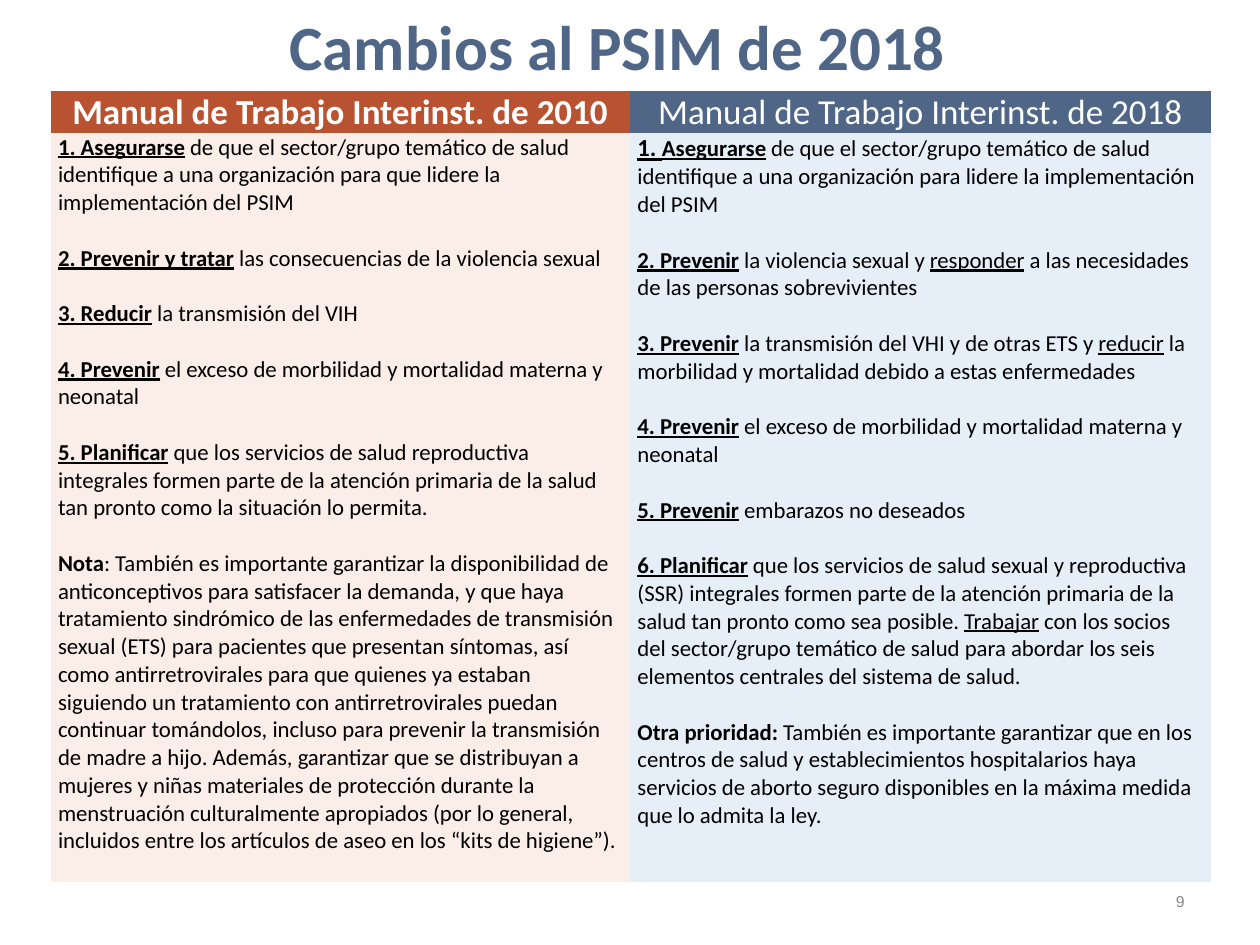
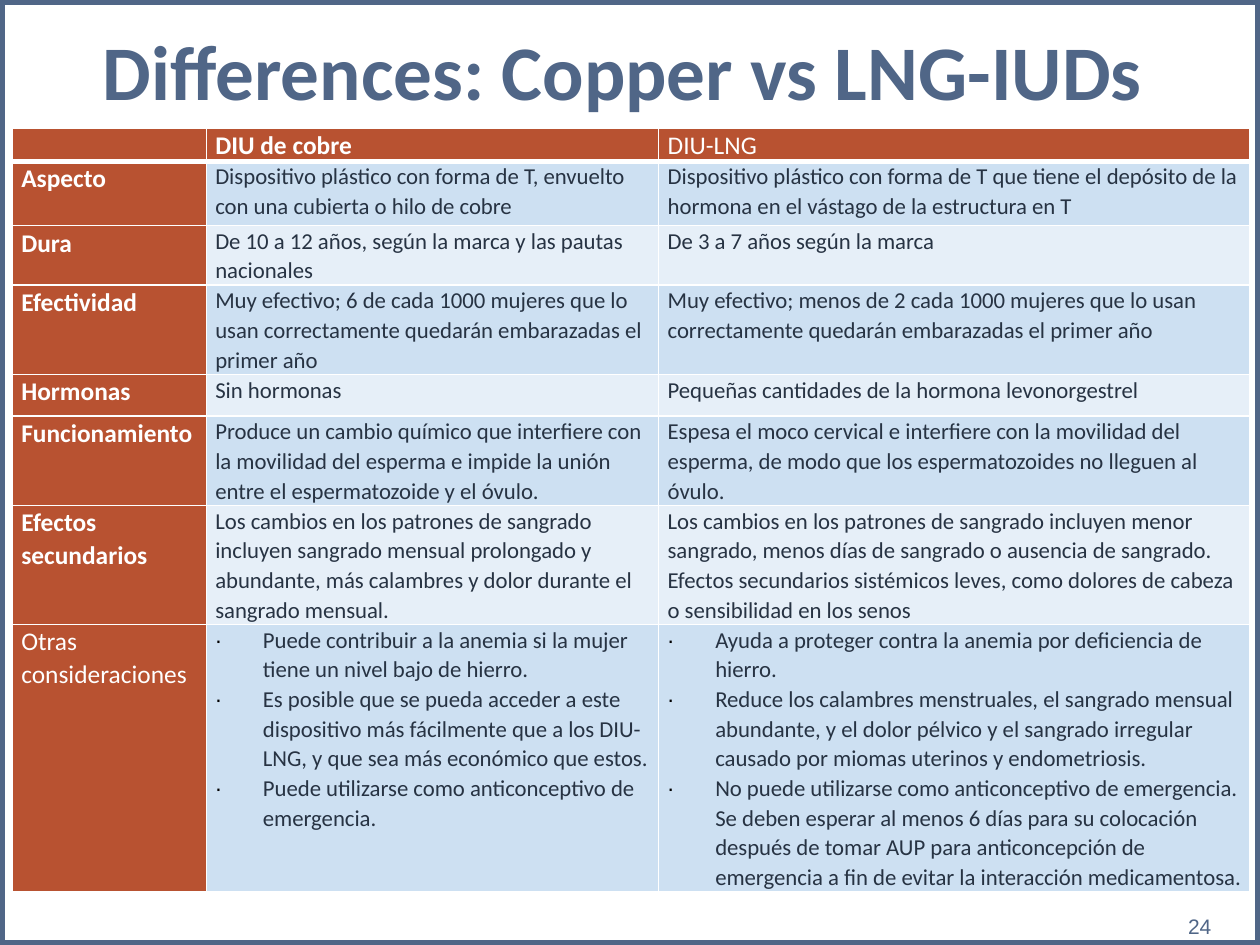
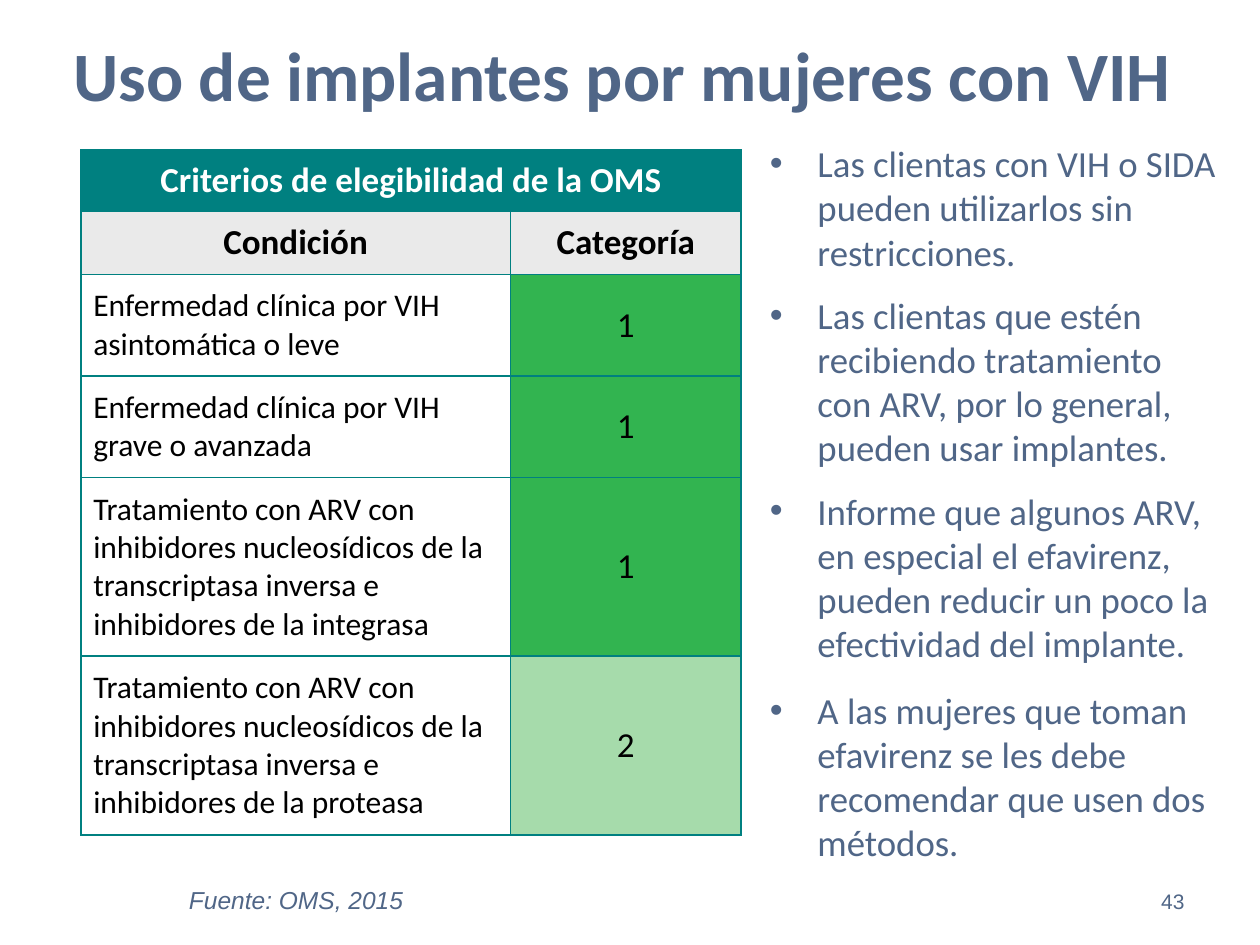
from lxml.etree import SubElement
from pptx import Presentation
from pptx.dml.color import RGBColor
from pptx.enum.shapes import MSO_SHAPE
from pptx.enum.text import MSO_ANCHOR, PP_ALIGN
from pptx.oxml.ns import qn
from pptx.util import Cm, Pt

SLATE = RGBColor(0x50, 0x66, 0x87)
RUST = RGBColor(0xB8, 0x52, 0x31)
PEACH = RGBColor(0xFB, 0xED, 0xE7)
PALE_BLUE = RGBColor(0xE6, 0xEF, 0xF8)
LIGHT_BLUE = RGBColor(0xCD, 0xE0, 0xF2)
INK = RGBColor(0x27, 0x33, 0x43)
TEAL = RGBColor(0x00, 0x80, 0x80)
SILVER = RGBColor(0xEA, 0xEA, 0xEA)
GREEN = RGBColor(0x32, 0xB4, 0x50)
LIGHT_GREEN = RGBColor(0xA6, 0xDB, 0xAB)
GREY = RGBColor(0x88, 0x88, 0x88)
BLACK = RGBColor(0, 0, 0)
WHITE = RGBColor(255, 255, 255)
LEFT, CENTER, RIGHT = PP_ALIGN.LEFT, PP_ALIGN.CENTER, PP_ALIGN.RIGHT


def write(paragraph, content, size, colour, face="Calibri", align=LEFT,
          bold=False, italic=False, bullet=None):
    spans = [(content, "")] if isinstance(content, str) else content
    for text, style in spans:
        run = paragraph.add_run()
        run.text = text
        if "b" in style:
            run.font.bold = True
        if "u" in style:
            run.font.underline = True
    paragraph.alignment = align
    if bullet:
        mark, mark_colour, indent = bullet
        properties = paragraph._p.get_or_add_pPr()
        properties.set("marL", str(indent))
        properties.set("indent", str(-Cm(0.96)))
        tint = SubElement(properties, qn("a:buClr"))
        SubElement(tint, qn("a:srgbClr"), val=str(mark_colour))
        SubElement(properties, qn("a:buFont"), typeface="Arial")
        SubElement(properties, qn("a:buChar"), char=mark)
    font = paragraph.font
    font.name, font.size, font.bold, font.italic = face, Pt(size), bold, italic
    font.color.rgb = colour


def style_cell(cell, fill, side, upright, edge=None, bottom_width=1):
    cell.margin_left = cell.margin_right = Cm(side)
    cell.margin_top = cell.margin_bottom = Cm(upright)
    properties = cell._tc.get_or_add_tcPr()
    for tag in ("lnL", "lnR", "lnT", "lnB"):
        width = bottom_width if tag == "lnB" else 1
        line = SubElement(properties, qn(f"a:{tag}"), w=str(Pt(width)))
        if edge is None:
            SubElement(line, qn("a:noFill"))
        else:
            paint = SubElement(line, qn("a:solidFill"))
            SubElement(paint, qn("a:srgbClr"), val=str(edge))
    cell.fill.solid()
    cell.fill.fore_color.rgb = fill


prs = Presentation()
prs.slide_width, prs.slide_height = Cm(25.4), Cm(19.05)
psim, iuds, implants = [prs.slides.add_slide(prs.slide_layouts[6]) for _ in range(3)]

titles = [
    (psim, (1.02, 0, 22.86, 1.83), "Cambios al PSIM de 2018", 36),
    (iuds, (0, 0.28, 25.12, 2.24), "Differences: Copper vs LNG-IUDs", 44.1),
    (implants, (0.64, 0.36, 24.13, 2.24), "Uso de implantes por mujeres con VIH ", 39.6),
]
numbers = [
    (psim, (18.21, 17.65, 5.92, 1.02), "9", 9, GREY),
    (iuds, (18.75, 18.16, 5.92, 1.02), "24", 12, SLATE),
    (implants, (18.21, 17.65, 5.92, 1.02), "43", 12, SLATE),
]
labels = [(*title, SLATE, "Calibri", CENTER, True) for title in titles]
labels += [(*number, "Arial", RIGHT, False) for number in numbers]
for slide, box, text, size, colour, face, align, bold in labels:
    frame = slide.shapes.add_textbox(*map(Cm, box)).text_frame
    frame.word_wrap = True
    frame.vertical_anchor = MSO_ANCHOR.MIDDLE
    write(frame.paragraphs[0], text, size, colour, face, align, bold)

grids = []
for slide, left, top, widths, heights in [
    (psim, 1.02, 1.83, (11.68, 11.71), (0.86, 15.09)),
    (iuds, 0.25, 2.59, (3.91, 9.12, 11.91), (0.66, 1.3, 1.2, 1.8, 0.84, 1.8, 2.4, 5.39)),
    (implants, 1.63, 3.02, (8.66, 4.65), (1.23, 1.28, 2.05, 2.05, 3.6, 3.6)),
]:
    grid = slide.shapes.add_table(
        len(heights), len(widths), Cm(left), Cm(top), Cm(sum(widths)), Cm(sum(heights))
    ).table
    grid.first_row = grid.horz_banding = False
    for column, width in zip(grid.columns, widths):
        column.width = Cm(width)
    for row, height in zip(grid.rows, heights):
        row.height = Cm(height)
    grids.append(grid)
manuals, devices, criteria = grids

objectives_2010 = [
    [("1. Asegurarse", "bu"), (" de que el sector/grupo temático de salud identifique a una organización para que lidere la implementación del PSIM", "")],
    [("2. Prevenir y tratar", "bu"), (" las consecuencias de la violencia sexual", "")],
    [("3. Reducir", "bu"), (" la transmisión del VIH", "")],
    [("4. Prevenir", "bu"), (" el exceso de morbilidad y mortalidad materna y neonatal", "")],
    [("5. Planificar", "bu"), (" que los servicios de salud reproductiva integrales formen parte de la atención primaria de la salud tan pronto como la situación lo permita.", "")],
    [("Nota", "b"), (": También es importante garantizar la disponibilidad de anticonceptivos para satisfacer la demanda, y que haya tratamiento sindrómico de las enfermedades de transmisión sexual (ETS) para pacientes que presentan síntomas, así como antirretrovirales para que quienes ya estaban siguiendo un tratamiento con antirretrovirales puedan continuar tomándolos, incluso para prevenir la transmisión de madre a hijo. Además, garantizar que se distribuyan a mujeres y niñas materiales de protección durante la menstruación culturalmente apropiados (por lo general, incluidos entre los artículos de aseo en los “kits de higiene”).", "")],
]
objectives_2018 = [
    [("1. ", "bu"), ("Asegurarse", "bu"), (" de que el sector/grupo temático de salud identifique a una organización para lidere la implementación del PSIM", "")],
    [("2. Prevenir", "bu"), (" la violencia sexual y ", ""), ("responder", "u"), (" a las necesidades de las personas sobrevivientes", "")],
    [("3. Prevenir", "bu"), (" la transmisión del VHI y de otras ETS y ", ""), ("reducir", "u"), (" la morbilidad y mortalidad debido a estas enfermedades", "")],
    [("4. Prevenir", "bu"), (" el exceso de morbilidad y mortalidad materna y neonatal", "")],
    [("5. Prevenir", "bu"), (" embarazos no deseados", "")],
    [("6. Planificar", "bu"), (" que los servicios de salud sexual y reproductiva (SSR) integrales formen parte de la atención primaria de la salud tan pronto como sea posible. ", ""), ("Trabajar", "u"), (" con los socios del sector/grupo temático de salud para abordar los seis elementos centrales del sistema de salud.", "")],
    [("Otra prioridad: ", "b"), ("También es importante garantizar que en los centros de salud y establecimientos hospitalarios haya servicios de aborto seguro disponibles en la máxima medida que lo admita la ley.", "")],
]
for column, (year, band, tint, objectives) in enumerate([
    (2010, RUST, PEACH, objectives_2010),
    (2018, SLATE, PALE_BLUE, objectives_2018),
]):
    heading, body = manuals.cell(0, column), manuals.cell(1, column)
    style_cell(heading, band, 0.15, 0)
    style_cell(body, tint, 0.15, 0)
    write(heading.text_frame.paragraphs[0], f"Manual de Trabajo Interinst. de {year}",
          20, WHITE, align=CENTER, bold=year == 2010)
    for position, objective in enumerate(objectives):
        paragraph = body.text_frame.add_paragraph() if position else body.text_frame.paragraphs[0]
        if position:
            paragraph.space_before = Pt(15.9)
        write(paragraph, objective, 13, BLACK)
manuals.cell(1, 1).text_frame.paragraphs[0].runs[0].font.size = Pt(14)

comparison = [
    ("", "DIU de cobre", "DIU-LNG"),
    ("Aspecto",
     "Dispositivo plástico con forma de T, envuelto con una cubierta o hilo de cobre",
     "Dispositivo plástico con forma de T que tiene el depósito de la hormona en el vástago de la estructura en T"),
    ("Dura",
     "De 10 a 12 años, según la marca y las pautas nacionales",
     "De 3 a 7 años según la marca"),
    ("Efectividad",
     "Muy efectivo; 6 de cada 1000 mujeres que lo usan correctamente quedarán embarazadas el primer año",
     "Muy efectivo; menos de 2 cada 1000 mujeres que lo usan correctamente quedarán embarazadas el primer año"),
    ("Hormonas", "Sin hormonas", "Pequeñas cantidades de la hormona levonorgestrel"),
    ("Funcionamiento",
     "Produce un cambio químico que interfiere con la movilidad del esperma e impide la unión entre el espermatozoide y el óvulo.",
     "Espesa el moco cervical e interfiere con la movilidad del esperma, de modo que los espermatozoides no lleguen al óvulo."),
    ("Efectos secundarios",
     "Los cambios en los patrones de sangrado incluyen sangrado mensual prolongado y abundante, más calambres y dolor durante el sangrado mensual.",
     "Los cambios en los patrones de sangrado incluyen menor sangrado, menos días de sangrado o ausencia de sangrado. Efectos secundarios sistémicos leves, como dolores de cabeza o sensibilidad en los senos"),
    ("Otras consideraciones",
     ["Puede contribuir a la anemia si la mujer tiene un nivel bajo de hierro.",
      "Es posible que se pueda acceder a este dispositivo más fácilmente que a los DIU-LNG, y que sea más económico que estos.",
      "Puede utilizarse como anticonceptivo de emergencia."],
     ["Ayuda a proteger contra la anemia por deficiencia de hierro.",
      "Reduce los calambres menstruales, el sangrado mensual abundante, y el dolor pélvico y el sangrado irregular causado por miomas uterinos y endometriosis.",
      "No puede utilizarse como anticonceptivo de emergencia. Se deben esperar al menos 6 días para su colocación después de tomar AUP para anticoncepción de emergencia a fin de evitar la interacción medicamentosa."]),
]
for row, entries in enumerate(comparison):
    for column, entry in enumerate(entries):
        cell = devices.cell(row, column)
        is_heading = row == 0 or column == 0
        fill = RUST if is_heading else (LIGHT_BLUE if row % 2 else PALE_BLUE)
        style_cell(cell, fill, 0.18, 0, WHITE, 1 if row else 3)
        paragraph = cell.text_frame.paragraphs[0]
        if not entry:
            paragraph._p.get_or_add_endParaRPr().set("sz", "1450")
            continue
        is_list = isinstance(entry, list)
        for position, point in enumerate(entry if is_list else [entry]):
            if position:
                paragraph = cell.text_frame.add_paragraph()
            paragraph.line_spacing = 1.07
            write(paragraph, point, 14.5 if is_heading else 13, WHITE if is_heading else INK,
                  bold=is_heading and point not in ("DIU-LNG", "Otras consideraciones"),
                  bullet=("∙", BLACK, Cm(0.96)) if is_list else None)

border = iuds.shapes.add_shape(MSO_SHAPE.RECTANGLE, 0, 0, prs.slide_width, prs.slide_height)
border.shadow.inherit = False
border.fill.background()
border.line.color.rgb = SLATE
border.line.width = Pt(5.25)

eligibility = [
    ("Criterios de elegibilidad de la OMS", ""),
    ("Condición", "Categoría"),
    ("Enfermedad clínica por VIH asintomática o leve", "1"),
    ("Enfermedad clínica por VIH grave o avanzada", "1"),
    ("Tratamiento con ARV con inhibidores nucleosídicos de la transcriptasa inversa e inhibidores de la integrasa", "1"),
    ("Tratamiento con ARV con inhibidores nucleosídicos de la transcriptasa inversa e inhibidores de la proteasa", "2"),
]
category_fills = {"1": GREEN, "2": LIGHT_GREEN}
criteria.cell(0, 0).merge(criteria.cell(0, 1))
for row, entries in enumerate(eligibility):
    for column, entry in enumerate(entries):
        cell = criteria.cell(row, column)
        is_condition = row > 1 and column == 0
        fill = (TEAL, SILVER)[row] if row < 2 else category_fills.get(entry, WHITE)
        style_cell(cell, fill, 0.25, 0.13 if row < 2 else 0.25, TEAL)
        cell.vertical_anchor = MSO_ANCHOR.MIDDLE
        if entry:
            write(cell.text_frame.paragraphs[0], entry, 18 if is_condition else 20,
                  BLACK if row else WHITE, align=LEFT if is_condition else CENTER, bold=row < 2)

advice = implants.shapes.add_textbox(Cm(14.96), Cm(2.72), Cm(9.8), Cm(14.3)).text_frame
advice.word_wrap = True
for position, (point, gap) in enumerate([
    ("Las clientas con VIH o SIDA pueden utilizarlos sin restricciones.", 0),
    ("Las clientas que estén recibiendo tratamiento con ARV, por lo general, pueden usar implantes.", 11),
    ("Informe que algunos ARV, en especial el efavirenz, pueden reducir un poco la efectividad del implante.", 11),
    ("A las mujeres que toman efavirenz se les debe recomendar que usen dos métodos.", 13.2),
]):
    paragraph = advice.add_paragraph() if position else advice.paragraphs[0]
    paragraph.space_before = Pt(gap)
    write(paragraph, point, 21, SLATE, bullet=("•", SLATE, Cm(1.27)))

citation = implants.shapes.add_textbox(Cm(3.56), Cm(17.78), Cm(22.23), Cm(1.27)).text_frame
citation.word_wrap = True
citation.paragraphs[0].line_spacing = 0.9
write(citation.paragraphs[0], "Fuente: OMS, 2015", 14, SLATE, "Arial", italic=True)

prs.save("out.pptx")
